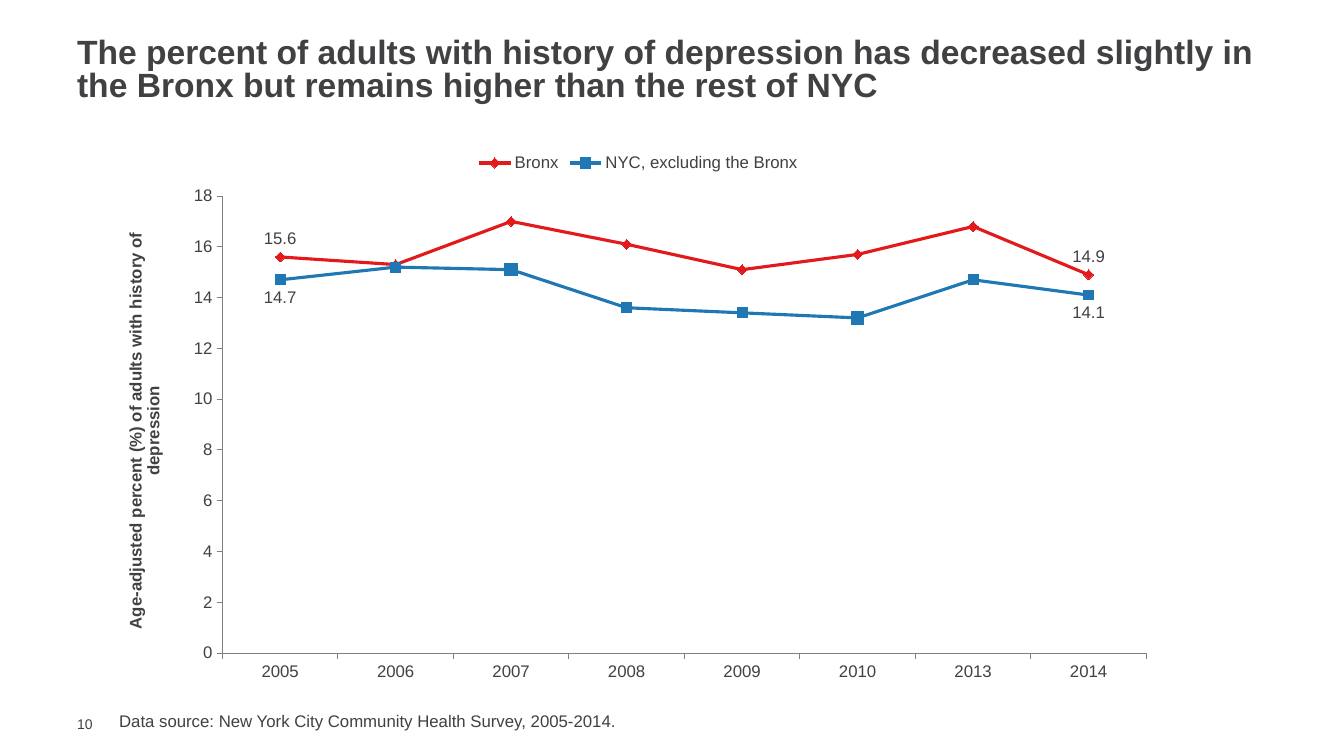
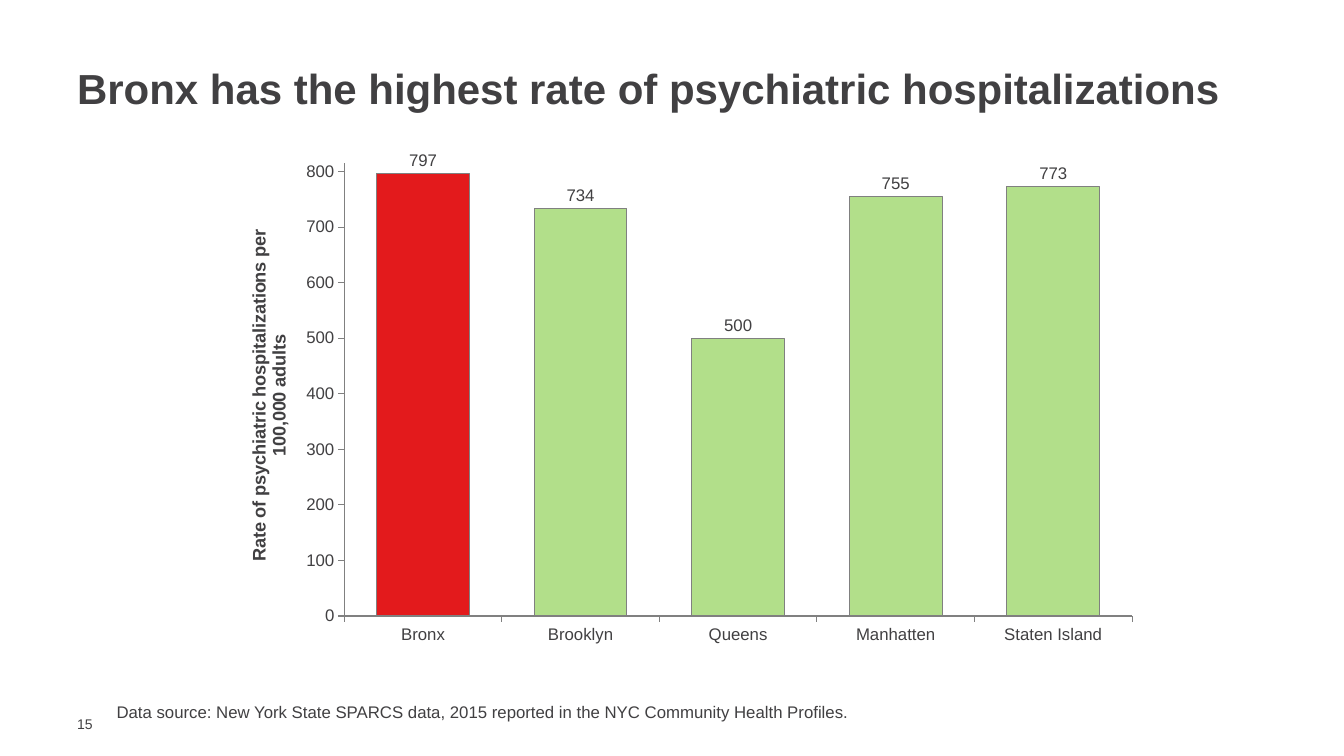
from dataclasses import dataclass, field
from typing import Any

import pptx
import pptx.chart.data
import pptx.dml.color
import pptx.enum.chart
import pptx.enum.text
import pptx.oxml
import pptx.oxml.ns
import pptx.util

COLOURS = {
    "text": "414042",
    "axis": "808080",
    "bronx": "E31A1C",
    "city": "1F78B4",
    "borough": "B2DF8A",
    "page": "FFFFFF",
}
FONT = "Arial"
COLUMNS, ROWS = 160, 90
CELL = pptx.util.Inches(1) / 12

ChartType = pptx.enum.chart.XL_CHART_TYPE
LabelPosition = pptx.enum.chart.XL_LABEL_POSITION
MarkerStyle = pptx.enum.chart.XL_MARKER_STYLE
Anchor = pptx.enum.text.MSO_ANCHOR


@dataclass(frozen=True)
class Area:
    """A rectangle in grid columns and rows."""
    column: float
    row: float
    columns: float
    rows: float

    def lengths(self) -> list[int]:
        return [round(n * CELL) for n in (self.column, self.row, self.columns, self.rows)]


@dataclass(frozen=True)
class Series:
    name: str
    values: list[float]
    colour: str
    marker: Any = None
    label_position: Any = LabelPosition.OUTSIDE_END
    large_points: tuple[int, ...] = ()


@dataclass(frozen=True)
class Graph:
    kind: Any
    area: Area
    categories: list[str]
    series: list[Series]
    axis_title: str
    axis_title_size: int
    axis_title_at: dict[str, float]
    plot_at: dict[str, float]
    scale: dict[str, float] = field(default_factory=dict)


@dataclass(frozen=True)
class Page:
    number: int
    title: str
    title_size: int
    title_area: Area
    source: str
    source_area: Area
    graph: Graph


NUMBER_AREA = Area(8, 85.2, 5.2, 2)

PAGES = [
    Page(
        10,
        "The percent of adults with history of depression has decreased slightly in "
        "the Bronx but remains higher than the rest of NYC",
        24, Area(8, 4, 144, 9),
        "Data source: New York City Community Health Survey, 2005-2014.",
        Area(13, 84, 119, 3.6),
        Graph(
            ChartType.LINE_MARKERS, Area(13, 17, 126, 65.4),
            ["2005", "2006", "2007", "2008", "2009", "2010", "2013", "2014"],
            [
                Series("Bronx", [15.6, 15.3, 17, 16.1, 15.1, 15.7, 16.8, 14.9],
                       "bronx", MarkerStyle.DIAMOND, LabelPosition.ABOVE),
                Series("NYC, excluding the Bronx",
                       [14.7, 15.2, 15.1, 13.6, 13.4, 13.2, 14.7, 14.1],
                       "city", MarkerStyle.SQUARE, LabelPosition.BELOW, (2, 5)),
            ],
            "Age-adjusted percent (%) of adults with history of depression", 12,
            {"x": 1.2, "y": 15.8},
            {"x": 10.7, "y": 9.7, "w": 87.3, "h": 83.2},
            {"minimum_scale": 0, "maximum_scale": 18, "major_unit": 2},
        ),
    ),
    Page(
        15,
        "Bronx has the highest rate of psychiatric hospitalizations",
        30, Area(8, 8, 144, 6),
        "Data source: New York State SPARCS data, 2015 reported in the "
        "NYC Community Health Profiles.",
        Area(12.7, 83, 119, 3.6),
        Graph(
            ChartType.COLUMN_CLUSTERED, Area(26, 18, 111, 59.9),
            ["Bronx", "Brooklyn", "Queens", "Manhatten", "Staten Island"],
            [Series("Series 1", [797, 734, 500, 755, 773], "borough")],
            "Rate of psychiatric hospitalizations per 100,000 adults", 13,
            {"x": 2.8, "y": 14.9},
            {"x": 13.5, "y": 2.4, "w": 84.5, "h": 90},
            {"minimum_scale": 0, "maximum_scale": 815, "major_unit": 100},
        ),
    ),
]


def rgb(name: str) -> pptx.dml.color.RGBColor:
    return pptx.dml.color.RGBColor.from_string(COLOURS[name])


def set_values(target: Any, values: dict[str, Any]) -> None:
    for name, value in values.items():
        setattr(target, name, value)


def style_font(font: Any, size: int, bold: bool = False) -> None:
    set_values(font, {"name": FONT, "size": pptx.util.Pt(size), "bold": bold})
    font.color.rgb = rgb("text")


def paint(fill: Any, colour: str) -> None:
    fill.solid()
    fill.fore_color.rgb = rgb(colour)


def stroke(line: Any, colour: str, width: float) -> None:
    paint(line.fill, colour)
    line.width = pptx.util.Pt(width)


def add_text(slide: Any, area: Area, text: str, size: int, bold: bool = False,
             spacing: float | None = None, **frame_format: Any) -> None:
    frame = slide.shapes.add_textbox(*area.lengths()).text_frame
    set_values(frame, {"word_wrap": True, **frame_format})
    para = frame.paragraphs[0]
    if spacing:
        para.line_spacing = spacing
    span = para.add_run()
    span.text = text
    style_font(span.font, size, bold)


def place(parent: Any, index: int, percents: dict[str, float]) -> None:
    """Give a chart part a fixed place, in percent of the chart's size."""
    for old in parent.findall(pptx.oxml.ns.qn("c:layout")):
        parent.remove(old)
    inner = '<c:layoutTarget val="inner"/>' if "w" in percents else ""
    modes = "".join(f'<c:{side}Mode val="edge"/>' for side in "xy")
    sizes = "".join(f'<c:{side} val="{share / 100:.3f}"/>' for side, share in percents.items())
    parent.insert(index, pptx.oxml.parse_xml(
        f'<c:layout {pptx.oxml.ns.nsdecls("c")}><c:manualLayout>'
        f'{inner}{modes}{sizes}</c:manualLayout></c:layout>'))


def style_axes(chart: Any, graph: Graph) -> None:
    for axis in (chart.category_axis, chart.value_axis):
        set_values(axis, {
            "has_major_gridlines": False,
            "major_tick_mark": pptx.enum.chart.XL_TICK_MARK.OUTSIDE,
            "minor_tick_mark": pptx.enum.chart.XL_TICK_MARK.NONE,
        })
        style_font(axis.tick_labels.font, 12)
        stroke(axis.format.line, "axis", 0.75)
    set_values(chart.value_axis, graph.scale)
    title = chart.value_axis.axis_title
    span = title.text_frame.paragraphs[0].add_run()
    span.text = graph.axis_title
    style_font(span.font, graph.axis_title_size, True)
    for body in title.element.iter(pptx.oxml.ns.qn("a:bodyPr")):
        body.set("rot", "-5400000")
        body.set("vert", "horz")
    place(title.element, 1, graph.axis_title_at)


def style_marker(marker: Any, series: Series, size: int) -> None:
    set_values(marker, {"style": series.marker, "size": size})
    paint(marker.format.fill, series.colour)
    stroke(marker.format.line, series.colour, 0.75)


def style_line(line: Any, series: Series) -> None:
    line.smooth = False
    stroke(line.format.line, series.colour, 2.25)
    style_marker(line.marker, series, 7)
    for index in series.large_points:
        point = line.points[index]
        stroke(point.format.line, series.colour, 2.25)
        style_marker(point.marker, series, 9)
    line.data_labels.show_value = False
    for index in (0, len(series.values) - 1):
        label = line.points[index].data_label
        style_font(label.font, 12)
        label.position = series.label_position


def style_bars(bars: Any, series: Series) -> None:
    """Fill the columns, with the first one, the Bronx, picked out."""
    for part, colour in ((bars, series.colour), (bars.points[0], "bronx")):
        paint(part.format.fill, colour)
        stroke(part.format.line, "axis", 0.75)
    set_values(bars.data_labels, {"show_value": True, "position": series.label_position})
    style_font(bars.data_labels.font, 12)


def add_graph(slide: Any, graph: Graph) -> None:
    data = pptx.chart.data.CategoryChartData()
    data.categories = graph.categories
    for series in graph.series:
        data.add_series(series.name, series.values)
    chart = slide.shapes.add_chart(graph.kind, *graph.area.lengths(), data).chart
    is_line = graph.kind == ChartType.LINE_MARKERS
    set_values(chart, {"has_title": False, "has_legend": is_line})
    style_font(chart.font, 10)
    style_axes(chart, graph)
    plot = chart.plots[0]
    plot.vary_by_categories = False
    if is_line:
        set_values(chart.legend, {
            "position": pptx.enum.chart.XL_LEGEND_POSITION.TOP,
            "include_in_layout": False,
        })
        style_font(chart.legend.font, 12)
    else:
        plot.gap_width = 70
    style_series = style_line if is_line else style_bars
    for drawn, series in zip(plot.series, graph.series):
        style_series(drawn, series)
    place(next(chart.element.iter(pptx.oxml.ns.qn("c:plotArea"))), 0, graph.plot_at)


def add_page(deck: Any, page: Page) -> None:
    slide = deck.slides.add_slide(deck.slide_layouts[6])
    paint(slide.background.fill, "page")
    add_text(slide, NUMBER_AREA, str(page.number), 10, vertical_anchor=Anchor.MIDDLE,
             margin_top=0, margin_right=0, margin_bottom=0)
    add_text(slide, page.title_area, page.title, page.title_size, True, 0.8,
             vertical_anchor=Anchor.MIDDLE)
    add_graph(slide, page.graph)
    add_text(slide, page.source_area, page.source, 12)


def main() -> None:
    deck = pptx.Presentation()
    set_values(deck, {"slide_width": round(COLUMNS * CELL), "slide_height": round(ROWS * CELL)})
    for page in PAGES:
        add_page(deck, page)
    deck.save("out.pptx")


if __name__ == "__main__":
    main()
